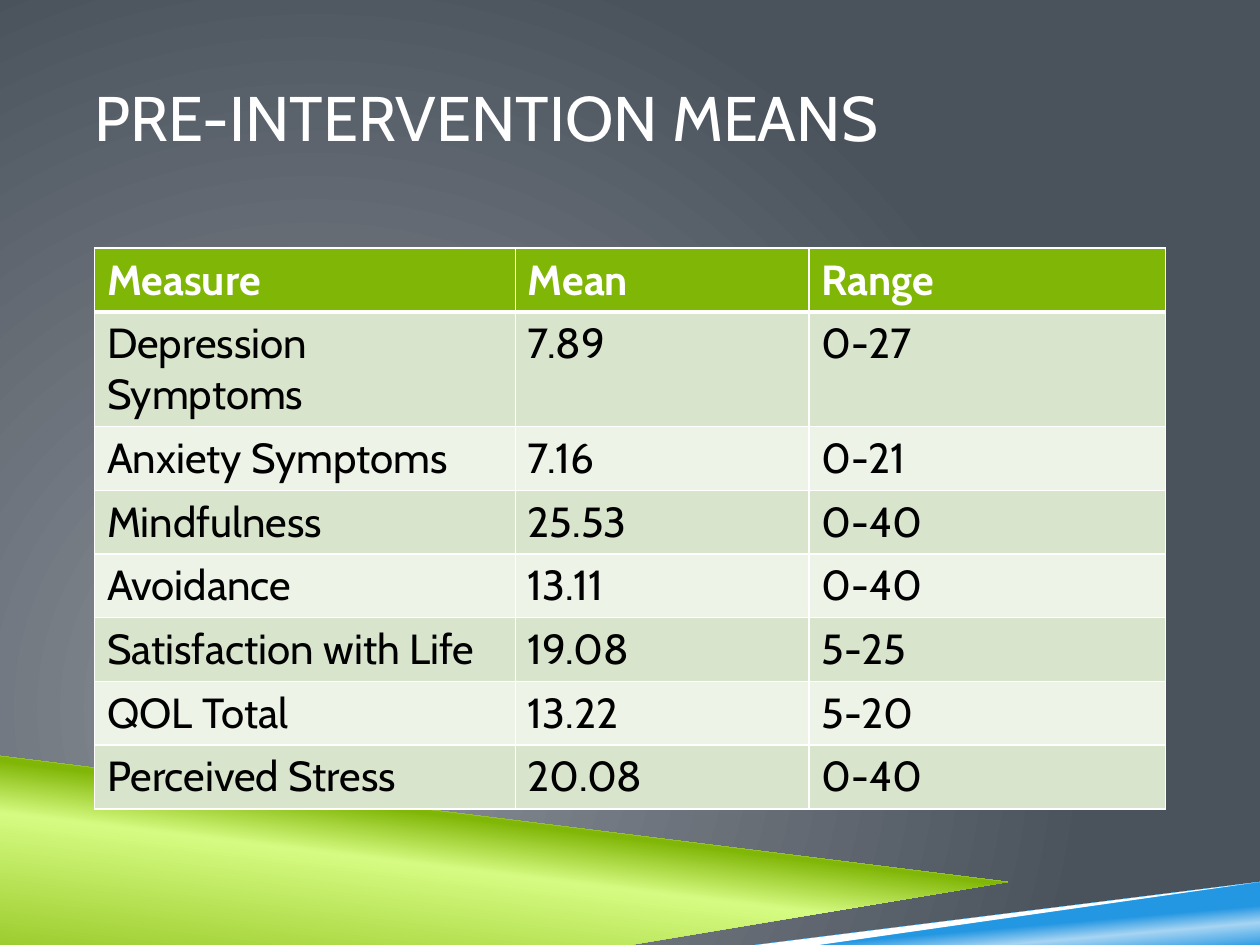
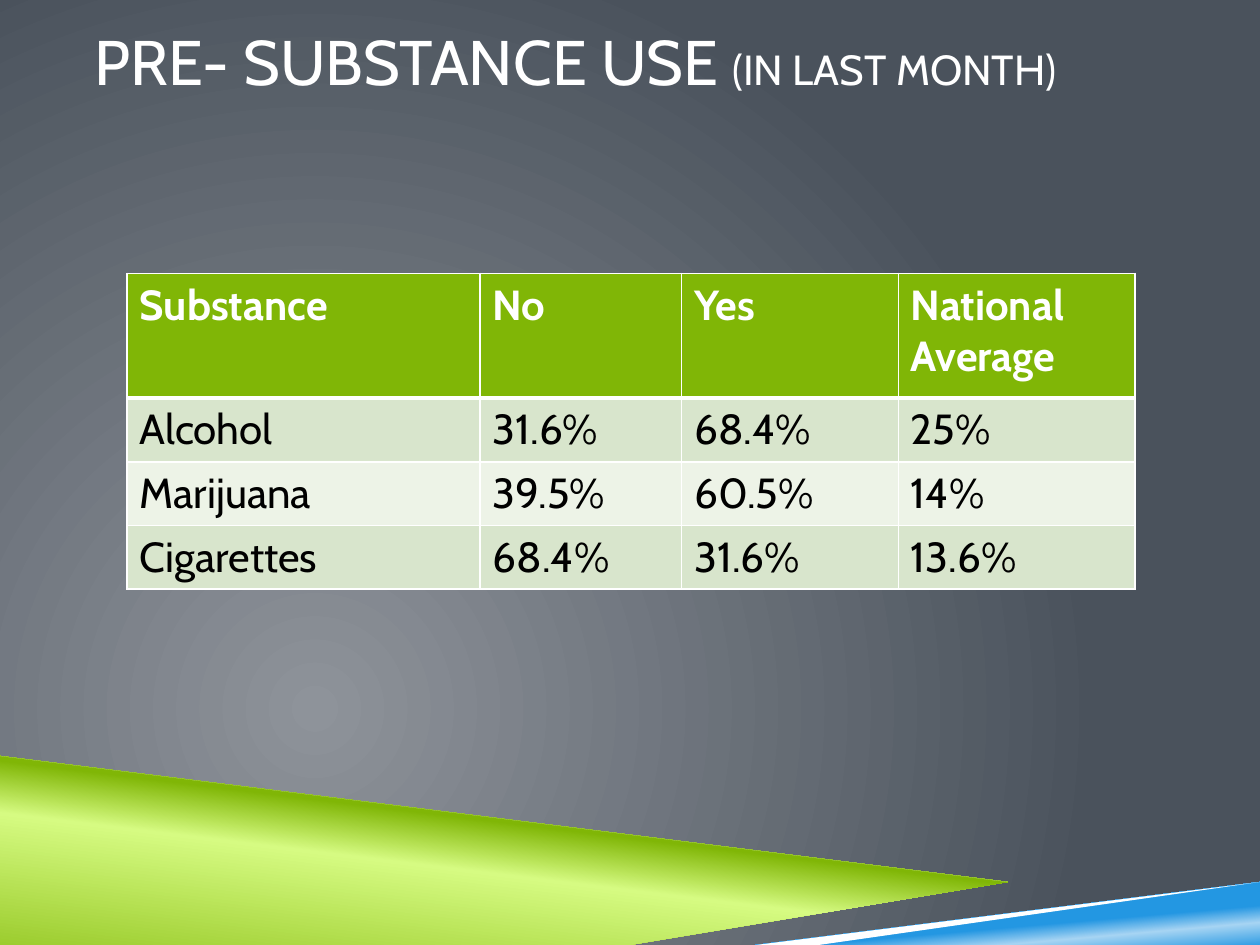
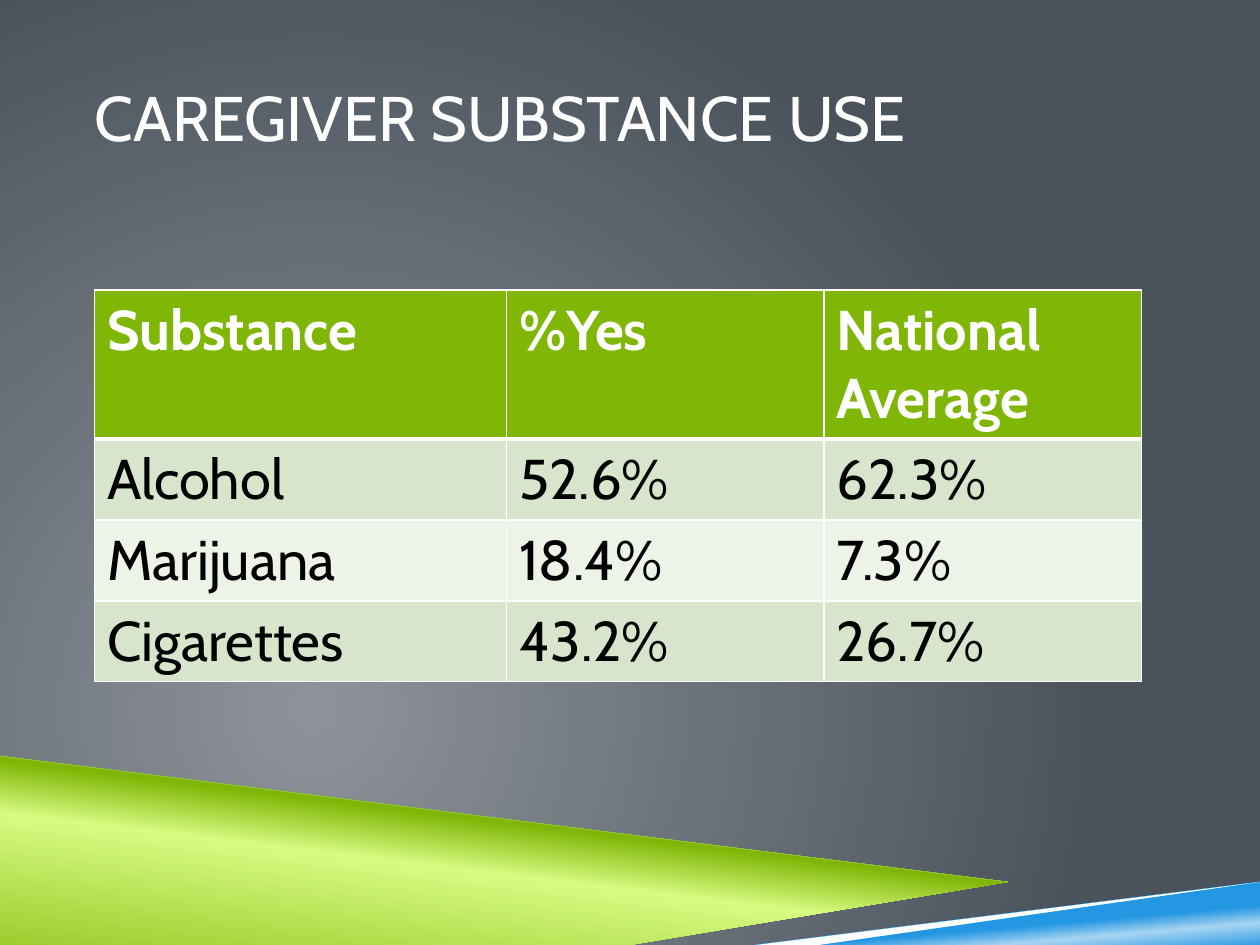
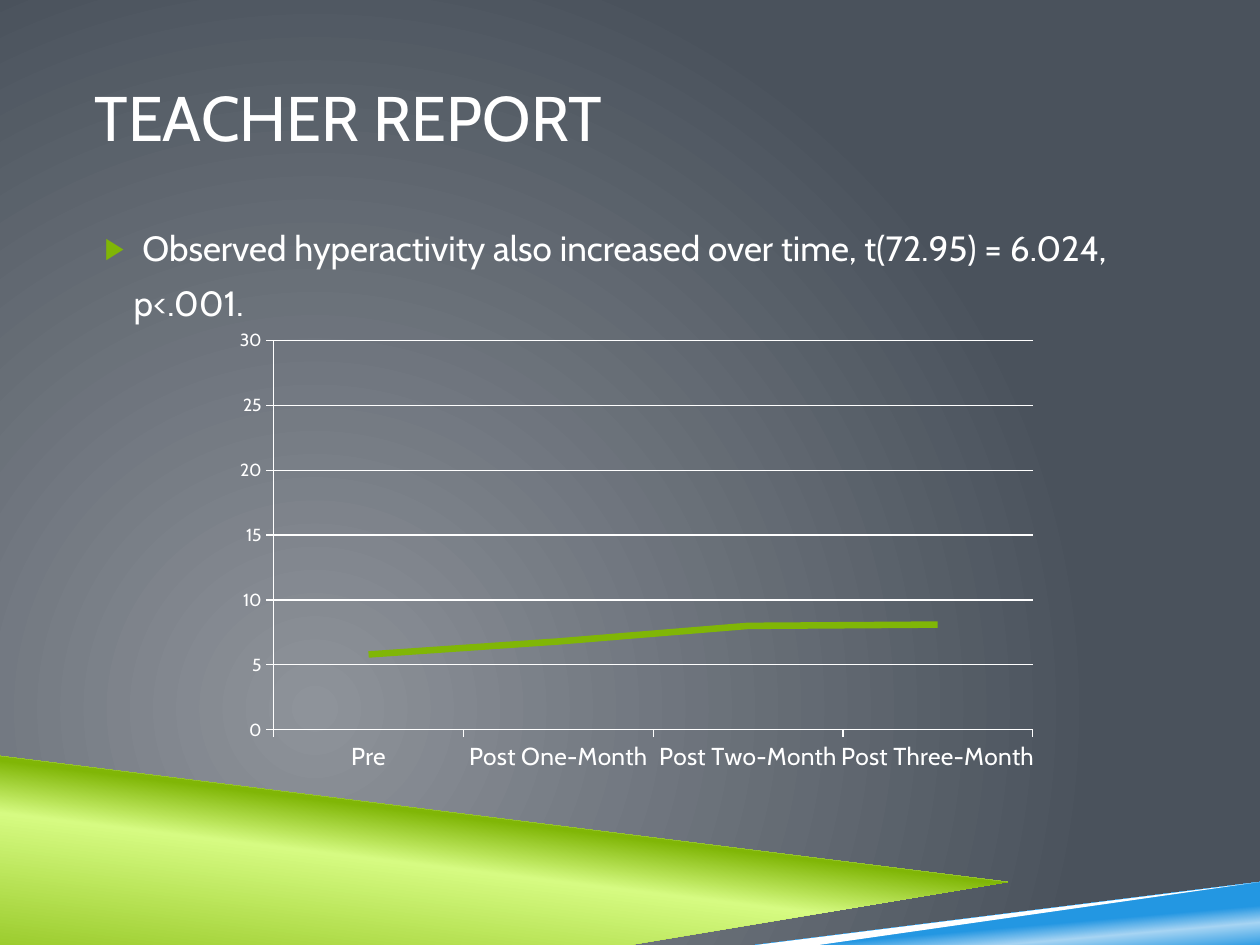
from lxml import etree
from pptx import Presentation
from pptx.chart.data import CategoryChartData
from pptx.dml.color import RGBColor
from pptx.enum.chart import XL_CHART_TYPE, XL_TICK_MARK
from pptx.enum.text import MSO_ANCHOR, MSO_AUTO_SIZE, PP_ALIGN
from pptx.oxml.ns import qn
from pptx.util import Inches, Pt

FONT = "Cabin"
WHITE = RGBColor(0xFF, 0xFF, 0xFF)
BLACK = RGBColor(0x00, 0x00, 0x00)
GREEN = RGBColor(0x80, 0xB6, 0x06)
LIME = RGBColor(0xD6, 0xFB, 0x82)
BLUE = RGBColor(0x23, 0x97, 0xE2)
PALE_BLUE = RGBColor(0xA7, 0xD5, 0xF3)
GREY = RGBColor(0x8E, 0x93, 0x9A)
SLATE = RGBColor(0x4A, 0x52, 0x5C)
ROW_DARK = RGBColor(0xD8, 0xE5, 0xCC)
ROW_LIGHT = RGBColor(0xED, 0xF3, 0xE7)

TITLE_AND_BODY, TITLE_ONLY = 1, 5
LEFT, TEXT_WIDTH = 0.75, 8.5

# Each band: outline in inches, then a colour or gradient stops with an angle.
BANDS = [
    ([(0, 5.97), (7.92, 6.92), (2, 7.5), (0, 7.5)],
     ([(0, GREEN), (52, LIME), (66, GREEN)], 277)),
    ([(1.98, 7.5), (10, 6.72), (10, 7.5)],
     ([(28, BLUE), (40, PALE_BLUE), (48, BLUE)], 265)),
    ([(0, 5.92), (0, 6), (7.9, 6.93), (8.32, 6.9)], WHITE),
    ([(10, 6.69), (1.84, 7.5), (2.66, 7.5), (10, 6.77)], WHITE),
]


def add_node(parent, tag, **attributes):
    values = {name: str(value) for name, value in attributes.items()}
    return etree.SubElement(parent, qn(tag), values)


def start_gradient(owner, fill, stops):
    """Give the fill the stops (percent, colour); return its element, still without direction."""
    fill.gradient()
    gradient = owner.find(".//" + qn("a:gradFill"))
    for child in list(gradient):
        gradient.remove(child)
    stop_list = add_node(gradient, "a:gsLst")
    for percent, color in stops:
        stop = add_node(stop_list, "a:gs", pos=percent * 1000)
        add_node(stop, "a:srgbClr", val=color)
    return gradient


def set_borders(cell, **widths):
    """Draw white borders, widths in points keyed by side: L, R, T, B."""
    properties = cell._tc.get_or_add_tcPr()
    for position, (side, width) in enumerate(widths.items()):
        line = etree.Element(qn("a:ln" + side), w=str(Pt(width)))
        add_node(add_node(line, "a:solidFill"), "a:srgbClr", val=WHITE)
        properties.insert(position, line)


class Deck:
    def __init__(self):
        self.file = Presentation()
        self.file.slide_width, self.file.slide_height = Inches(10), Inches(7.5)
        self.page = None
        self.paint_background()

    def paint_background(self):
        master = self.file.slide_master
        gradient = start_gradient(master.element, master.background.fill,
                                  [(0, GREY), (100, SLATE)])
        direction = add_node(gradient, "a:path", path="circle")
        add_node(direction, "a:fillToRect", l=50000, t=100000, r=100000, b=50000)

    def move_bands_to_master(self):
        """Outlines can only be built on a page, so build them there and hand them to the master."""
        tree = self.file.slide_master.shapes._spTree
        for index, (points, paint) in enumerate(BANDS):
            builder = self.page.shapes.build_freeform(*points[0], scale=Inches(1))
            builder.add_line_segments(points[1:], close=True)
            band = builder.convert_to_shape()
            band.shadow.inherit = False
            band.line.fill.background()
            if isinstance(paint, RGBColor):
                band.fill.solid()
                band.fill.fore_color.rgb = paint
            else:
                stops, angle = paint
                gradient = start_gradient(band.element, band.fill, stops)
                add_node(gradient, "a:lin", ang=angle * 60000, scaled=0)
            band.element.nvSpPr.cNvPr.set("id", str(101 + index))
            tree.insert(2 + index, band.element)

    def add_span(self, para, text, size, color=WHITE, bold=False):
        span = para.add_run()
        span.text = text
        font = span.font
        font.name, font.size, font.bold = FONT, Pt(size), bold
        font.color.rgb = color

    def place_text(self, box, top, height, anchor):
        box.left, box.top = Inches(LEFT), Inches(top)
        box.width, box.height = Inches(TEXT_WIDTH), Inches(height)
        frame = box.text_frame
        frame.margin_left = frame.margin_right = 0
        frame.margin_top = frame.margin_bottom = Inches(0.05)
        frame.vertical_anchor = anchor
        frame.auto_size = MSO_AUTO_SIZE.NONE
        frame.word_wrap = True
        return frame

    def add_page(self, title, note="", top=0.3, layout=TITLE_ONLY):
        first = self.page is None
        self.page = self.file.slides.add_slide(self.file.slide_layouts[layout])
        if first:
            self.move_bands_to_master()
        frame = self.place_text(self.page.shapes.title, top, 1.25, MSO_ANCHOR.MIDDLE)
        para = frame.paragraphs[0]
        para.alignment = PP_ALIGN.LEFT
        self.add_span(para, title, 36)
        if note:
            self.add_span(para, note, 24)

    def add_finding(self, lines):
        """Fill the body: the first line has a bullet, the others follow under it."""
        frame = self.place_text(self.page.placeholders[1], 1.75, 1.24, MSO_ANCHOR.TOP)
        for index, text in enumerate(lines):
            para = frame.add_paragraph() if index else frame.paragraphs[0]
            properties = para._p.get_or_add_pPr()
            margin, indent = (0.31, 0) if index else (0.38, -0.3)
            properties.set("marL", str(Inches(margin)))
            properties.set("indent", str(Inches(indent)))
            para.space_before = Pt(7 if index else 0)
            if index:
                add_node(properties, "a:buNone")
            else:
                add_node(add_node(properties, "a:buClr"), "a:srgbClr", val=GREEN)
                add_node(properties, "a:buSzPct", val=85000)
                add_node(properties, "a:buFont", typeface="Arial")
                add_node(properties, "a:buChar", char="▶")
            self.add_span(para, text, 20)

    def add_table(self, left, top, widths, heights, rows, size):
        table = self.page.shapes.add_table(
            len(rows), len(widths), Inches(left), Inches(top),
            Inches(sum(widths)), Inches(sum(heights))).table
        table.horz_banding = False
        for column, width in zip(table.columns, widths):
            column.width = Inches(width)
        for index, (values, height) in enumerate(zip(rows, heights)):
            table.rows[index].height = Inches(height)
            header = index == 0
            fill = GREEN if header else (ROW_DARK if index % 2 else ROW_LIGHT)
            for cell, text in zip(table.rows[index].cells, values):
                cell.fill.solid()
                cell.fill.fore_color.rgb = fill
                set_borders(cell, L=1, R=1, T=3 if index == 1 else 1, B=3 if header else 1)
                self.add_span(cell.text_frame.paragraphs[0], text, size,
                              WHITE if header else BLACK, header)

    def add_line_chart(self, left, top, width, height, categories, values):
        data = CategoryChartData()
        data.categories = categories
        data.add_series("Series 1", values)
        chart = self.page.shapes.add_chart(
            XL_CHART_TYPE.LINE, Inches(left), Inches(top),
            Inches(width), Inches(height), data).chart
        chart.has_legend = chart.has_title = False
        chart.font.name, chart.font.size = FONT, Pt(10)
        chart.font.color.rgb = WHITE

        plot = chart.plots[0]
        plot.vary_by_categories = False
        series = plot.series[0]
        series.smooth = False
        series.format.line.width = Pt(3.75)
        series.format.line.color.rgb = GREEN

        value_axis, category_axis = chart.value_axis, chart.category_axis
        value_axis.minimum_scale, value_axis.maximum_scale = 0, 30
        value_axis.major_unit = 5
        value_axis.has_major_gridlines = True
        for axis, size in ((value_axis, 10), (category_axis, 14)):
            axis.major_tick_mark = XL_TICK_MARK.OUTSIDE
            font = axis.tick_labels.font
            font.name, font.size = FONT, Pt(size)
            font.color.rgb = WHITE
        for lines in (value_axis, category_axis, value_axis.major_gridlines):
            lines.format.line.color.rgb = WHITE
            lines.format.line.width = Pt(0.75)
        self.fix_plot_area(chart, x=0.093, y=0.065, w=0.698, h=0.767)

    def fix_plot_area(self, chart, **shares):
        area = chart._chartSpace.find(".//" + qn("c:plotArea"))
        for old in area.findall(qn("c:layout")):
            area.remove(old)
        layout = etree.Element(qn("c:layout"))
        manual = add_node(layout, "c:manualLayout")
        add_node(manual, "c:layoutTarget", val="inner")
        for name in "xy":
            add_node(manual, f"c:{name}Mode", val="edge")
        for name, share in shares.items():
            add_node(manual, "c:" + name, val=share)
        area.insert(0, layout)


def main():
    deck = Deck()

    deck.add_page("PRE-INTERVENTION MEANS")
    deck.add_table(LEFT, 1.97, [3.34, 2.33, 2.83], [0.41] * 8, [
        ("Measure", "Mean", "Range"),
        ("Depression Symptoms", "7.89", "0-27"),
        ("Anxiety Symptoms", "7.16", "0-21"),
        ("Mindfulness", "25.53", "0-40"),
        ("Avoidance", "13.11", "0-40"),
        ("Satisfaction with Life", "19.08", "5-25"),
        ("QOL Total", "13.22", "5-20"),
        ("Perceived Stress", "20.08", "0-40"),
    ], 24)

    deck.add_page("PRE- SUBSTANCE USE ", "(IN LAST MONTH)", top=-0.15)
    deck.add_table(1.01, 2.17, [2.8, 1.6, 1.72, 1.88], [0.99] + [0.46] * 3, [
        ("Substance", "No", "Yes", "National Average"),
        ("Alcohol", "31.6%", "68.4%", "25%"),
        ("Marijuana", "39.5%", "60.5%", "14%"),
        ("Cigarettes", "68.4%", "31.6%", "13.6%"),
    ], 24)

    deck.add_page("CAREGIVER SUBSTANCE USE")
    deck.add_table(LEFT, 2.3, [3.27, 2.52, 2.52], [0.41] * 4, [
        ("Substance", "%Yes", "National Average"),
        ("Alcohol", "52.6%", "62.3%"),
        ("Marijuana", "18.4%", "7.3%"),
        ("Cigarettes", "43.2%", "26.7%"),
    ], 32)

    deck.add_page("TEACHER REPORT", layout=TITLE_AND_BODY)
    deck.add_finding([
        "Observed hyperactivity also increased over time, t(72.95) = 6.024,",
        "p<.001.",
    ])
    deck.add_line_chart(
        1.37, 2.44, 8.63, 4.03,
        ["Pre", "Post One-Month", "Post Two-Month", "Post Three-Month"],
        [5.8, 6.8, 8, 8.1])

    deck.file.save("out.pptx")


if __name__ == "__main__":
    main()
